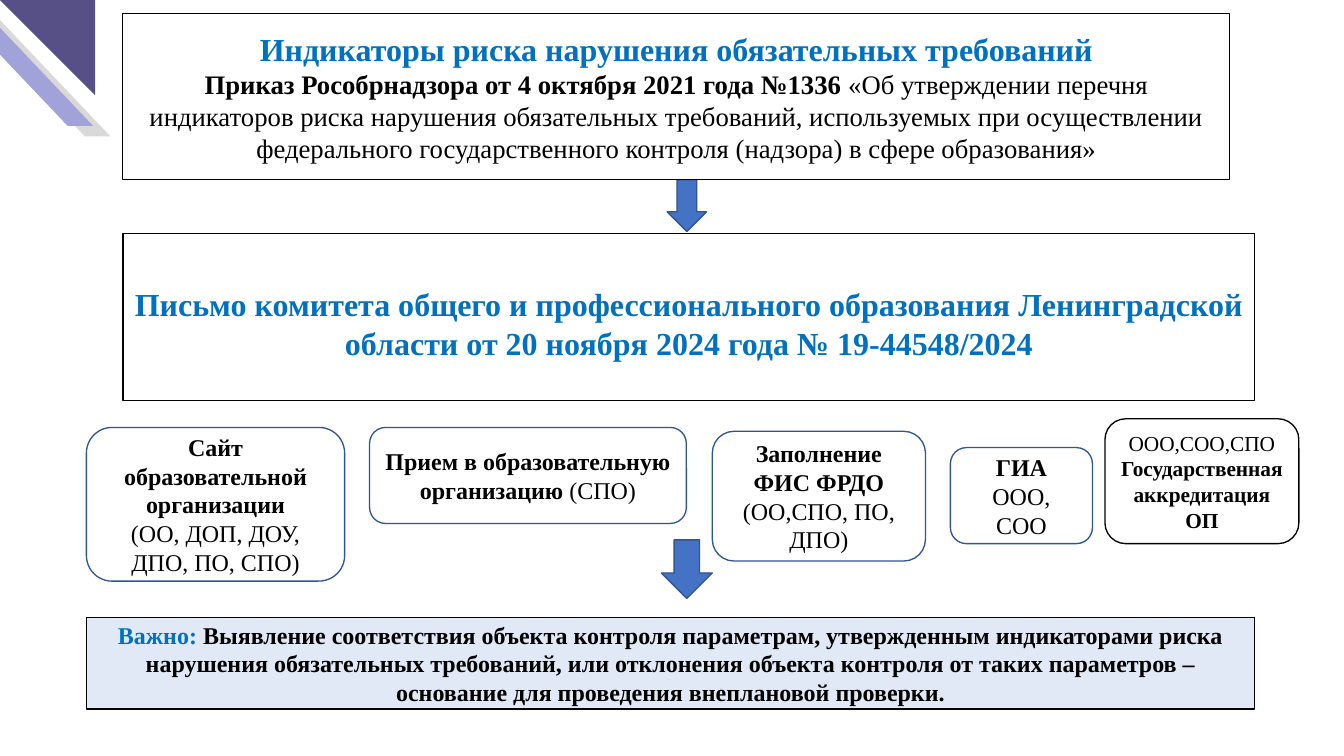
import lxml.etree
import pptx
import pptx.dml.color
import pptx.enum.shapes
import pptx.enum.text
import pptx.oxml.ns
import pptx.util
from dataclasses import dataclass

Inches = pptx.util.Inches
Pt = pptx.util.Pt
SHAPE = pptx.enum.shapes.MSO_SHAPE


@dataclass(frozen=True)
class Theme:
    font: str = "Times New Roman"
    heading: int = 24
    body: int = 20
    label: int = 18
    small: int = 16
    black: str = "000000"
    white: str = "FFFFFF"
    accent: str = "0070C0"
    card_line: str = "2F5597"
    arrow_fill: str = "4472C4"
    arrow_line: str = "325491"
    note_fill: str = "8FAADC"
    grey: str = "D9D9D9"
    lilac: str = "A2A2DA"
    violet: str = "565087"


def rgb(color):
    return pptx.dml.color.RGBColor.from_string(color)


def add_run(p, text, *, font, size, color, bold=False):
    r = p.add_run()
    r.text = text
    r.font.name = font
    r.font.size = Pt(size)
    r.font.color.rgb = rgb(color)
    r.font.bold = bold


class SlideBuilder:
    def __init__(self, slide, theme):
        self.s = slide
        self.theme = theme

    def shape(self, kind, box, fill, line=None, opacity=None):
        sp = self.s.shapes.add_shape(kind, *map(Inches, box))
        sp.shadow.inherit = False
        sp.fill.solid()
        sp.fill.fore_color.rgb = rgb(fill)
        if opacity is not None:
            qn = pptx.oxml.ns.qn
            color = sp.element.spPr.find(f"{qn('a:solidFill')}/{qn('a:srgbClr')}")
            lxml.etree.SubElement(color, qn("a:alpha"), val=str(opacity * 1000))
        if line:
            sp.line.color.rgb = rgb(line)
            sp.line.width = Pt(1)
        else:
            sp.line.fill.background()
        return sp

    def stripe(self, left, top, fill):
        sp = self.shape(SHAPE.PARALLELOGRAM, (left, top, 1.51, 1.31), fill)
        sp.adjustments[0] = 0.95
        sp.element.spPr.find(pptx.oxml.ns.qn("a:xfrm")).set("flipH", "1")

    def corner(self):
        self.stripe(-0.36, 0.11, self.theme.grey)
        self.stripe(-0.54, 0, self.theme.lilac)
        sp = self.shape(SHAPE.RIGHT_TRIANGLE, (0, 0, 0.99, 0.99), self.theme.violet)
        sp.rotation = 180

    def arrow(self, *box):
        self.shape(SHAPE.DOWN_ARROW, box, self.theme.arrow_fill, self.theme.arrow_line)

    def text(self, sp, paragraphs, size, top_inset=0.05):
        """Each paragraph is a list of (text, format overrides) pairs."""
        tf = sp.text_frame
        tf.word_wrap = True
        tf.vertical_anchor = pptx.enum.text.MSO_ANCHOR.MIDDLE
        tf.margin_top = Inches(top_inset)
        for i, runs in enumerate(paragraphs):
            p = tf.add_paragraph() if i else tf.paragraphs[0]
            p.alignment = pptx.enum.text.PP_ALIGN.CENTER
            for text, style in runs:
                base = dict(font=self.theme.font, size=size, color=self.theme.black)
                add_run(p, text, **(base | style))

    def panel(self, box, paragraphs, size, fill=None, opacity=None, top_inset=0.05):
        sp = self.shape(SHAPE.RECTANGLE, box, fill or self.theme.white,
                        self.theme.black, opacity)
        self.text(sp, paragraphs, size, top_inset)

    def card(self, box, paragraphs, size=None, line=None):
        sp = self.shape(SHAPE.ROUNDED_RECTANGLE, box, self.theme.white,
                        line or self.theme.card_line)
        self.text(sp, paragraphs, size or self.theme.label)


def main():
    prs = pptx.Presentation()
    prs.slide_width, prs.slide_height = Inches(14), Inches(7.87)
    theme = Theme()
    b = SlideBuilder(prs.slides.add_slide(prs.slide_layouts[6]), theme)

    plain, bold = {}, {"bold": True}
    accent = {"bold": True, "color": theme.accent}
    heading = accent | {"size": theme.heading}

    b.corner()
    b.panel((1.28, 2.43, 11.79, 1.74), [
        [("Письмо комитета общего и профессионального образования Ленинградской "
          "области от 20 ноября 2024 года № 19-44548/2024", heading)],
    ], theme.heading, top_inset=0.18)
    b.arrow(6.95, 1.87, 0.41, 0.54)
    b.panel((1.28, 0.14, 11.53, 1.73), [
        [("Индикаторы риска нарушения обязательных требований", heading)],
        [("Приказ Рособрнадзора от 4 октября 2021 года №1336 ", bold),
         ("«Об утверждении перечня индикаторов риска нарушения обязательных "
          "требований, используемых при осуществлении федерального "
          "государственного контроля (надзора) в сфере образования»", plain)],
    ], theme.body)

    cards = [
        ((0.9, 4.45, 2.69, 1.6),
         [[("Сайт образовательной организации", bold)],
          [("(ОО, ДОП, ДОУ, ДПО, ПО, СПО)", plain)]]),
        ((3.85, 4.45, 3.3, 1),
         [[("Прием в образовательную организацию ", bold), ("(СПО)", plain)]]),
        ((7.42, 4.49, 2.22, 1.35),
         [[("Заполнение ФИС ФРДО", bold)], [("(ОО,СПО, ПО, ДПО)", plain)]]),
        ((9.9, 4.66, 1.48, 1),
         [[("ГИА", bold)], [("ООО, СОО", plain)]]),
    ]
    for box, paragraphs in cards:
        b.card(box, paragraphs)
    b.card((11.51, 4.36, 2.02, 1.3), [
        [("ООО,СОО,СПО", plain)],
        [("Государственная аккредитация ОП", bold)],
    ], theme.small, theme.black)

    b.arrow(6.89, 5.62, 0.53, 0.61)
    b.panel((0.9, 6.43, 12.17, 0.95), [
        [("Важно: ", accent),
         ("Выявление соответствия объекта контроля параметрам, утвержденным "
          "индикаторами риска нарушения обязательных требований, или отклонения "
          "объекта контроля от таких параметров – основание для проведения "
          "внеплановой проверки.", bold)],
    ], theme.label, theme.note_fill, opacity=25)

    prs.save("out.pptx")


if __name__ == "__main__":
    main()
